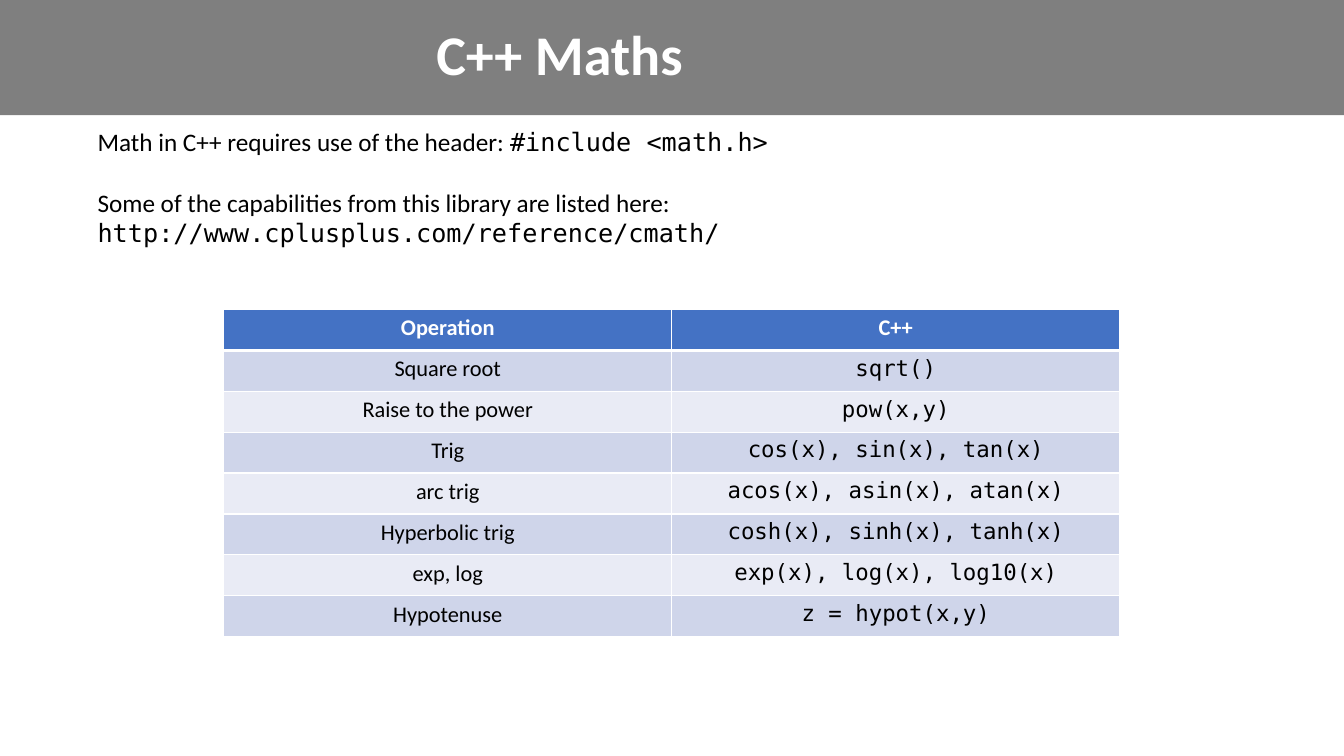
from dataclasses import dataclass

from lxml.etree import SubElement
from pptx import Presentation
from pptx.dml.color import RGBColor as Rgb
from pptx.enum.shapes import MSO_SHAPE as Shape
from pptx.enum.text import MSO_ANCHOR as Anchor, PP_ALIGN as Align
from pptx.oxml.ns import qn
from pptx.util import Cm, Pt


@dataclass(frozen=True)
class Theme:
    black: str = "000000"
    white: str = "FFFFFF"
    header: str = "4472C4"
    bands: tuple = ("CFD5EA", "E9EBF5")
    sans: str = "Calibri"
    mono: str = "DejaVu Sans Mono"
    title_size: int = 40
    body_size: int = 18
    table_size: int = 16
    thin: int = 1
    thick: int = 3


THEME = Theme()

OPERATIONS = [
    ("Operation", "C++"),
    ("Square root", "sqrt()"),
    ("Raise to the power", "pow(x,y)"),
    ("Trig", "cos(x), sin(x), tan(x)"),
    ("arc trig", "acos(x), asin(x), atan(x)"),
    ("Hyperbolic trig", "cosh(x), sinh(x), tanh(x)"),
    ("exp, log", "exp(x), log(x), log10(x)"),
    ("Hypotenuse", "z = hypot(x,y)"),
]


def add_span(para, text, size, font=THEME.sans, color=THEME.black, bold=False):
    span = para.add_run()
    span.text = text
    span.font.name = font
    span.font.size = Pt(size)
    span.font.bold = bold
    span.font.color.rgb = Rgb.from_string(color)


def add_text_frame(page, left, top, width, height, anchor=Anchor.TOP):
    box = page.shapes.add_textbox(Cm(left), Cm(top), Cm(width), Cm(height))
    frame = box.text_frame
    frame.word_wrap = True
    frame.vertical_anchor = anchor
    return frame


def add_banner(page):
    banner = page.shapes.add_shape(
        Shape.RECTANGLE, Cm(-0.08), Cm(-0.05), Cm(33.96), Cm(2.95))
    banner.shadow.inherit = False
    banner.line.fill.background()
    banner.fill.solid()
    banner.fill.fore_color.rgb = Rgb.from_string(THEME.black)
    color = banner.fill._xPr.find(qn("a:solidFill"))[0]
    SubElement(color, qn("a:alpha"), val="50000")


def add_title(page, text):
    frame = add_text_frame(page, 0.56, 0.3, 27.08, 2.31, Anchor.MIDDLE)
    para = frame.paragraphs[0]
    para.alignment = Align.CENTER
    para.line_spacing = 0.9
    add_span(para, text, THEME.title_size, color=THEME.white, bold=True)


def add_intro(page):
    frame = add_text_frame(page, 2.21, 3.05, 29.18, 3.33)
    size = THEME.body_size
    para = frame.paragraphs[0]
    add_span(para, "Math in C++ requires use of the header: ", size)
    add_span(para, "#include <math.h>", size, THEME.mono)
    para = frame.add_paragraph()
    para.space_before = Pt(22)
    add_span(para, "Some of the capabilities from this library are listed here:", size)
    add_span(para, " http://www.cplusplus.com/reference/cmath/", size, THEME.mono)


def set_borders(cell, top, bottom):
    properties = cell._tc.get_or_add_tcPr()
    widths = {"L": THEME.thin, "R": THEME.thin, "T": top, "B": bottom}
    for side, width in widths.items():
        line = SubElement(properties, qn(f"a:ln{side}"), w=str(Pt(width)))
        fill = SubElement(line, qn("a:solidFill"))
        SubElement(fill, qn("a:srgbClr"), val=THEME.white)


def fill_cell(cell, text, row, column):
    is_header = row == 0
    set_borders(cell,
                top=THEME.thick if row == 1 else THEME.thin,
                bottom=THEME.thick if is_header else THEME.thin)
    cell.fill.solid()
    color = THEME.header if is_header else THEME.bands[(row - 1) % 2]
    cell.fill.fore_color.rgb = Rgb.from_string(color)
    para = cell.text_frame.paragraphs[0]
    para.alignment = Align.CENTER
    add_span(para, text, THEME.table_size,
             font=THEME.mono if column and not is_header else THEME.sans,
             color=THEME.white if is_header else THEME.black,
             bold=is_header)


def add_operations_table(page, rows):
    row_height = Cm(1.03)
    table = page.shapes.add_table(
        len(rows), len(rows[0]), Cm(5.64), Cm(7.8),
        Cm(22.58), row_height * len(rows)).table
    for row, texts in enumerate(rows):
        table.rows[row].height = row_height
        for column, text in enumerate(texts):
            fill_cell(table.cell(row, column), text, row, column)


def main():
    deck = Presentation()
    deck.slide_width, deck.slide_height = Cm(33.87), Cm(19.05)
    page = deck.slides.add_slide(deck.slide_layouts[6])
    # Heading
    add_banner(page)
    add_title(page, "C++ Maths")
    # Table of operations
    add_operations_table(page, OPERATIONS)
    # Introduction
    add_intro(page)
    deck.save("out.pptx")


if __name__ == "__main__":
    main()
